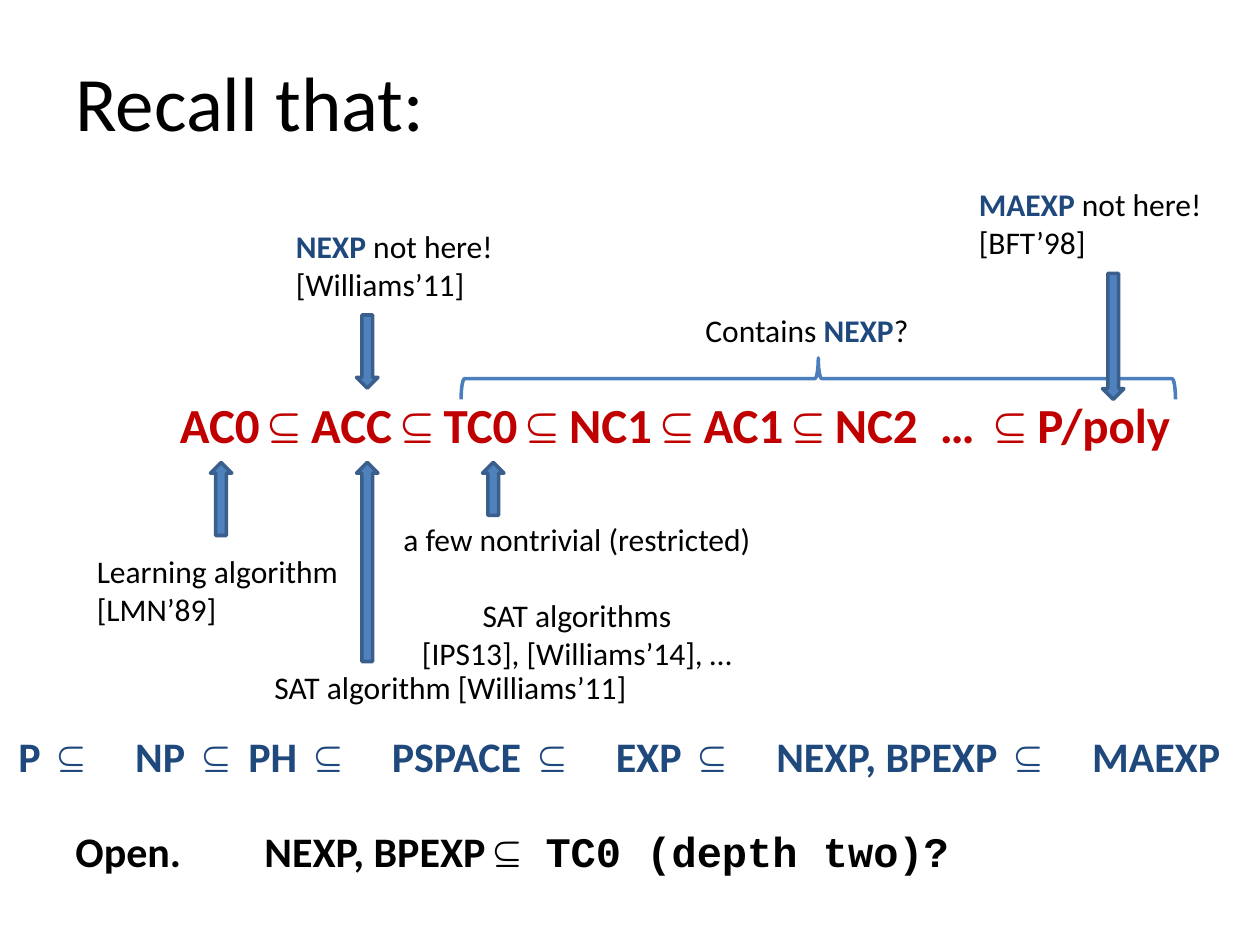
import dataclasses

import pptx
import pptx.dml.color
import pptx.enum.shapes
import pptx.enum.text
import pptx.util

Inches = pptx.util.Inches
Shape = pptx.enum.shapes.MSO_SHAPE
Align = pptx.enum.text.PP_ALIGN
Anchor = pptx.enum.text.MSO_ANCHOR


@dataclasses.dataclass(frozen=True)
class Theme:
    sans: str = "Calibri"
    mono: str = "Courier New"
    black: str = "000000"
    red: str = "C00000"
    navy: str = "1F497D"
    fill: str = "4F81BD"
    outline: str = "3A5F8C"
    brace: str = "4B7EBC"
    line_width: float = 2
    title: int = 44
    circuits: int = 28
    chain: int = 24
    note: int = 18


THEME = Theme()
HIGHLIGHTS = ("NEXP", "MAEXP")


def color(value):
    return pptx.dml.color.RGBColor.from_string(value)


def add_text(page, box, pieces, size, ink=THEME.black, bold=False,
             align=Align.LEFT, anchor=Anchor.TOP):
    frame = page.shapes.add_textbox(*map(Inches, box)).text_frame
    frame.word_wrap = True
    frame.vertical_anchor = anchor
    para = frame.paragraphs[0]
    para.alignment = align
    for piece in pieces:
        highlighted = piece in HIGHLIGHTS
        for index, line in enumerate(piece.split("\n")):
            if index:
                para.add_line_break()
            span = para.add_run()
            span.text = line
            font = span.font
            font.name = THEME.mono if piece.startswith("⊆") else THEME.sans
            font.size = pptx.util.Pt(size)
            font.bold = bold or highlighted
            font.color.rgb = color(THEME.navy if highlighted else ink)


def add_outlined(page, kind, box, outline):
    shape = page.shapes.add_shape(kind, *map(Inches, box))
    shape.shadow.inherit = False
    shape.line.color.rgb = color(outline)
    shape.line.width = pptx.util.Pt(THEME.line_width)
    return shape


def add_arrow(page, kind, left, top, height):
    arrow = add_outlined(page, kind, (left, top, 0.17, height), THEME.outline)
    arrow.fill.solid()
    arrow.fill.fore_color.rgb = color(THEME.fill)


def add_brace(page, box):
    left, top, width, height = box
    upright = (left + (width - height) / 2, top + (height - width) / 2, height, width)
    brace = add_outlined(page, Shape.RIGHT_BRACE, upright, THEME.brace)
    brace.rotation = 270
    brace.fill.background()


def add_title(page, box):
    add_text(page, box, ["Recall that:"], THEME.title, anchor=Anchor.MIDDLE)


def add_circuit_classes(page, box):
    names = ["AC0 ", " ACC ", " TC0 ", " NC1 ", " AC1 ", " NC2  …  ", " P/poly"]
    pieces = [names[0]]
    for name in names[1:]:
        pieces += ["⊆", name]
    add_text(page, box, pieces, THEME.circuits, THEME.red, True)


def add_uniform_classes(page, box):
    pieces = ["P  ", "⊆  ", "NP  ", "⊆", "  PH  ", "⊆  ", "PSPACE  ", "⊆  ",
              "EXP  ", "⊆  ", "NEXP, BPEXP  ", "⊆  ", "MAEXP"]
    add_text(page, box, pieces, THEME.chain, THEME.navy, True, Align.CENTER)


def add_open_question(page, box):
    pieces = ["Open. \t\tNEXP, BPEXP ", "⊆ TC0 (depth two)?"]
    add_text(page, box, pieces, THEME.chain, bold=True)


def add_lower_bounds(page, box):
    left, top, width, height = box
    bottom = top + height
    notes = [
        ((left, top + 0.33, 1.92, 0.71), ["NEXP", " not here! [Williams’11]"]),
        ((left + 3.25, top + 1, 2.58, 0.4), ["Contains ", "NEXP", "?"]),
        ((left + 5.42, top, 3.17, 0.71), ["MAEXP", " not here!\n[BFT’98]"]),
    ]
    for place, pieces in notes:
        add_text(page, place, pieces, THEME.note)
    add_brace(page, (left + 1.41, bottom - 0.33, width - 1.41, 0.33))
    add_arrow(page, Shape.DOWN_ARROW, left + 0.58, bottom - 0.67, 0.58)
    add_arrow(page, Shape.DOWN_ARROW, left + 6.5, bottom - 1, 1)


def add_algorithms(page, box):
    left, top, width, height = box
    for offset, length in ((1, 0.58), (2.16, 1.58), (3.16, 0.42)):
        add_arrow(page, Shape.UP_ARROW, left + offset, top, length)
    add_text(page, (left, top + 0.66, 2.5, 0.71),
             ["Learning algorithm\n[LMN’89]"], THEME.note)
    add_text(page, (left + 1.41, top + height - 0.4, 4, 0.4),
             ["SAT algorithm [Williams’11]"], THEME.note)
    add_text(page, (left + width - 3, top + 0.41, 3, 1.01),
             ["a few nontrivial (restricted) \nSAT algorithms\n[IPS13], [Williams’14], …"],
             THEME.note, align=Align.CENTER)


def main():
    deck = pptx.Presentation()
    deck.slide_width = Inches(10)
    deck.slide_height = Inches(7.5)
    page = deck.slides.add_slide(deck.slide_layouts[6])
    add_title(page, (0.5, 0.17, 9, 1.25))
    add_circuit_classes(page, (1.33, 3.08, 9.75, 0.57))
    add_uniform_classes(page, (0, 5.75, 9.83, 0.5))
    add_lower_bounds(page, (2.25, 1.42, 7.08, 1.75))
    add_algorithms(page, (0.67, 3.67, 5.41, 1.98))
    add_open_question(page, (0.5, 6.5, 8.75, 0.5))
    deck.save("out.pptx")


if __name__ == "__main__":
    main()
